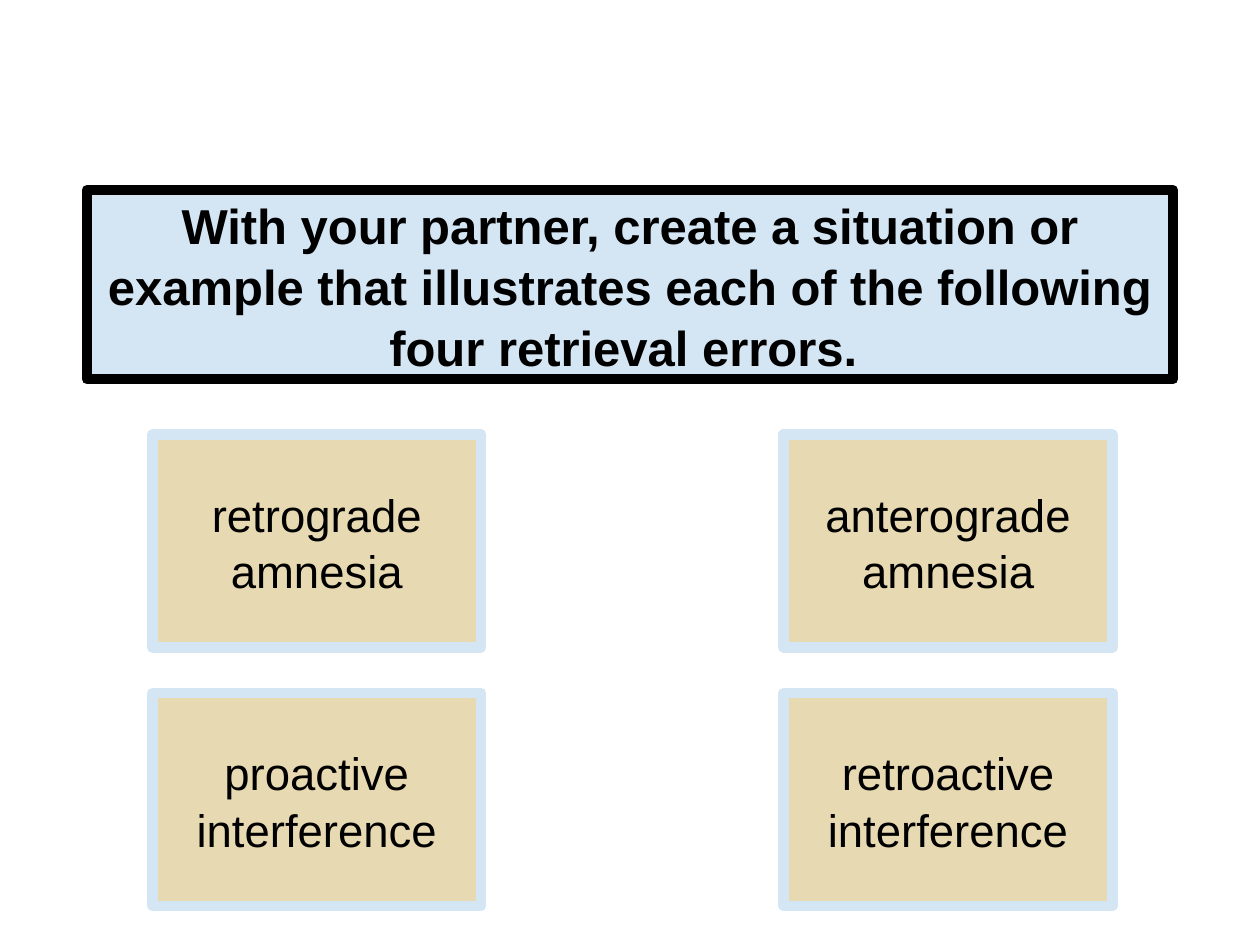
from dataclasses import dataclass
from itertools import product

from pptx import Presentation
from pptx.dml.color import RGBColor
from pptx.enum.shapes import MSO_SHAPE as Shape
from pptx.enum.text import MSO_ANCHOR as Anchor, MSO_AUTO_SIZE as AutoSize, PP_ALIGN as Align
from pptx.util import Inches, Pt


@dataclass(frozen=True)
class Theme:
    font: str = "Arial"
    ink: RGBColor = RGBColor(0, 0, 0)
    sky: RGBColor = RGBColor(0xD4, 0xE5, 0xF4)
    sand: RGBColor = RGBColor(0xE7, 0xD9, 0xB1)
    prompt_size: Pt = Pt(28)
    error_size: Pt = Pt(26)
    border: Pt = Pt(6)
    line_spacing: float = 1.04


theme = Theme()


def style_box(box, wording, fill, border, size, bold):
    box.fill.solid()
    box.fill.fore_color.rgb = fill
    box.line.color.rgb = border
    box.line.width = theme.border
    frame = box.text_frame
    frame.word_wrap = True
    frame.auto_size = AutoSize.NONE
    frame.vertical_anchor = Anchor.MIDDLE
    paragraph = frame.paragraphs[0]
    paragraph.alignment = Align.CENTER
    paragraph.line_spacing = theme.line_spacing
    run = paragraph.add_run()
    run.text = wording
    run.font.name = theme.font
    run.font.size = size
    run.font.bold = bold
    run.font.color.rgb = theme.ink


deck = Presentation()
deck.slide_width, deck.slide_height = Inches(10), Inches(7.5)
slide = deck.slides.add_slide(deck.slide_layouts[5])

prompt = slide.shapes.title
prompt.left, prompt.top = Inches(0.69), Inches(1.51)
prompt.width, prompt.height = Inches(8.62), Inches(1.5)
style_box(
    prompt,
    "With your partner, create a situation or example that illustrates "
    "each of the following four retrieval errors. ",
    theme.sky, theme.ink, theme.prompt_size, True,
)

retrieval_errors = [
    "retrograde amnesia",
    "anterograde amnesia",
    "proactive interference",
    "retroactive interference",
]
rows, columns = (3.45, 5.5), (1.21, 6.22)
for wording, (top, left) in zip(retrieval_errors, product(rows, columns)):
    error = slide.shapes.add_shape(
        Shape.RECTANGLE, Inches(left), Inches(top), Inches(2.61), Inches(1.69)
    )
    error.shadow.inherit = False
    style_box(error, wording, theme.sand, theme.sky, theme.error_size, False)

deck.save("out.pptx")
